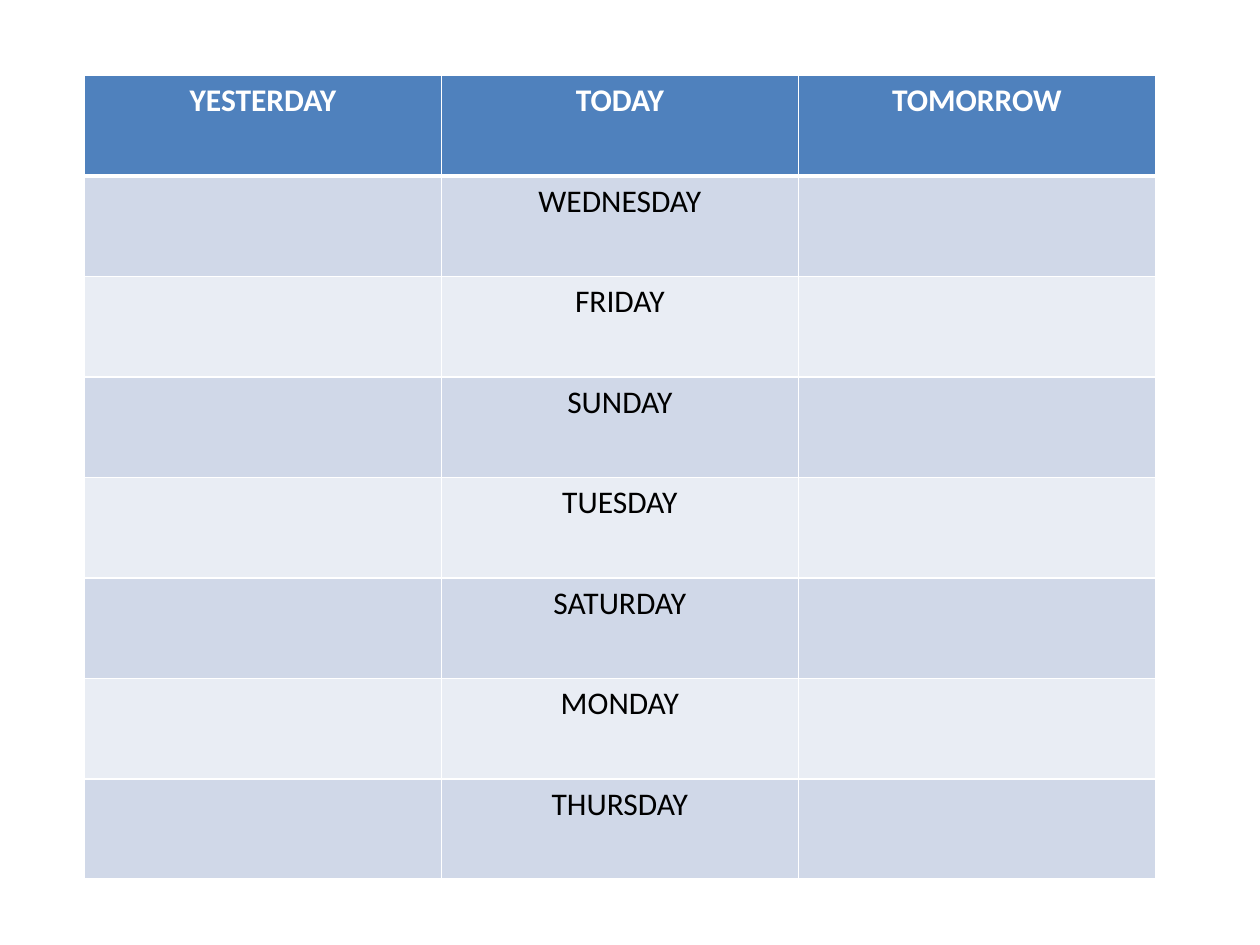
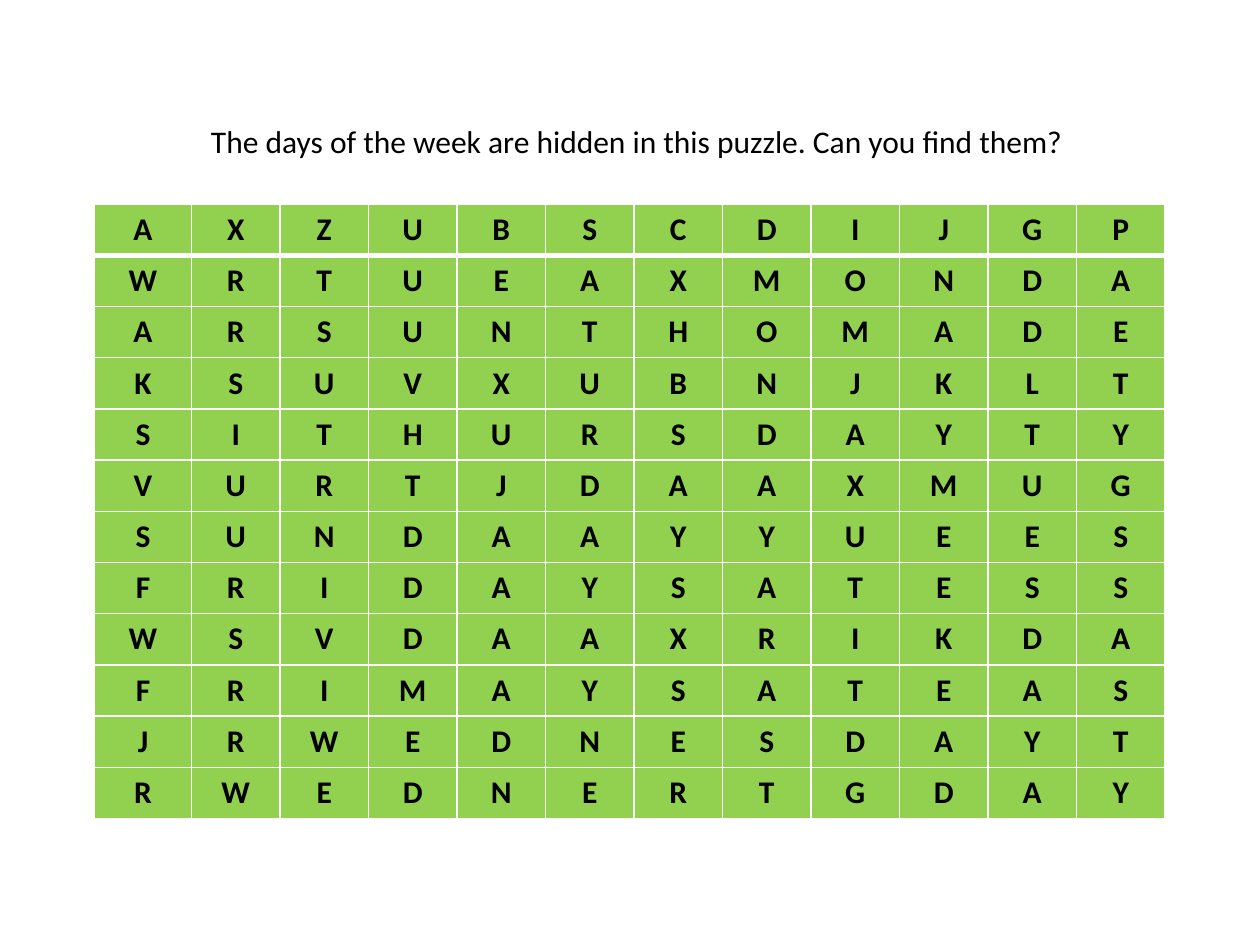
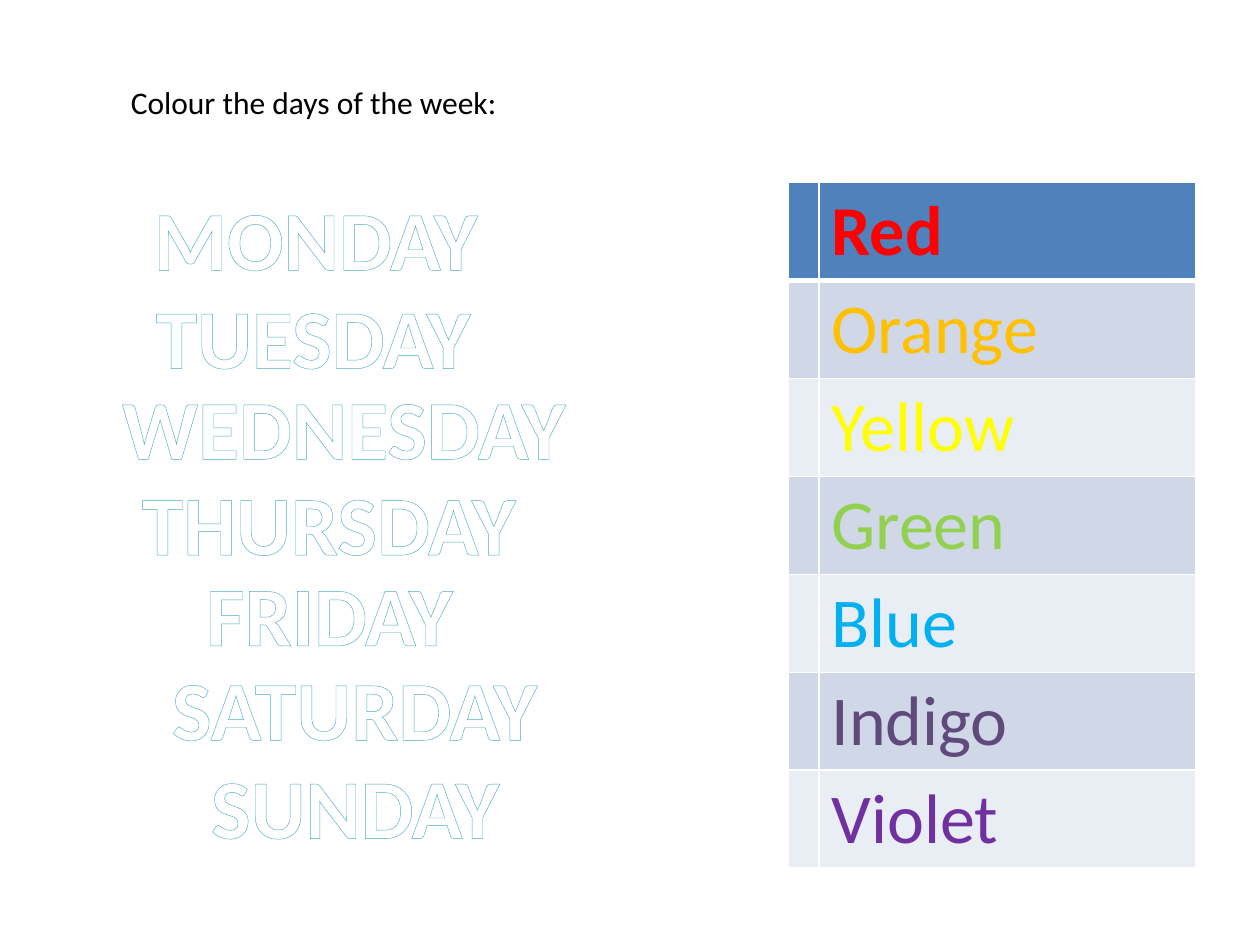
from lxml import etree
from pptx import Presentation
from pptx.dml import color
from pptx.enum import text
from pptx.oxml import ns
from pptx.util import Pt

SCALE = 9144
COLORS = {
    "white": "FFFFFF", "black": "000000", "header": "4F81BD",
    "band_dark": "D0D8E8", "band_light": "E9EDF4", "puzzle": "92D050",
    "outline": "4BACC6", "red": "FF0000", "orange": "FFC000",
    "yellow": "FFFF00", "green": "92D050", "blue": "00B0F0",
    "indigo": "604A7B", "violet": "7030A0",
}
BODY = {"size": Pt(18), "name": "Calibri", "bold": False}
STRONG = {**BODY, "bold": True}
SWATCH = {**BODY, "size": Pt(40)}
BIG = {**STRONG, "size": Pt(48)}
CENTER = text.PP_ALIGN.CENTER
LEFT = text.PP_ALIGN.LEFT

TODAYS = ["WEDNESDAY", "FRIDAY", "SUNDAY", "TUESDAY", "SATURDAY", "MONDAY", "THURSDAY"]
PUZZLE = """
AXZUBSCDIJGP
WRTUEAXMONDA
ARSUNTHOMADE
KSUVXUBNJKLT
SITHURSDAYTY
VURTJDAAXMUG
SUNDAAYYUEES
FRIDAYSATESS
WSVDAAXRIKDA
FRIMAYSATEAS
JRWEDNESDAYT
RWEDNERTGDAY
""".split()
RAINBOW = ["Red", "Orange", "Yellow", "Green", "Blue", "Indigo", "Violet"]
OUTLINED_DAYS = [
    ("MONDAY", 85, 143, 331, True),
    ("TUESDAY", 112, 221, 273, False),
    ("WEDNESDAY", 85, 293, 376, False),
    ("THURSDAY", 101, 369, 320, False),
    ("FRIDAY", 121, 441, 281, True),
    ("SATURDAY", 125, 516, 313, False),
    ("SUNDAY", 156, 594, 252, False),
]


def px(value):
    return round(value * SCALE)


def rgb(name):
    return color.RGBColor.from_string(COLORS[name])


def line(tag, name, points):
    element = etree.Element(ns.qn(tag), w=str(Pt(points)))
    fill = etree.SubElement(element, ns.qn("a:solidFill"))
    etree.SubElement(fill, ns.qn("a:srgbClr"), val=COLORS[name])
    return element


def banded(row):
    if row == 0:
        return "header"
    return "band_dark" if row % 2 else "band_light"


class Deck:
    def __init__(self, width, height):
        self.presentation = Presentation()
        self.presentation.slide_width = px(width)
        self.presentation.slide_height = px(height)
        self.slide = None

    def add_slide(self):
        self.slide = self.presentation.slides.add_slide(self.presentation.slide_layouts[6])

    def set_words(self, frame, words, style, ink, align):
        paragraph = frame.paragraphs[0]
        paragraph.alignment = align
        run = paragraph.add_run()
        run.text = words
        for attribute, value in style.items():
            setattr(run.font, attribute, value)
        run.font.color.rgb = rgb(ink)
        return run

    def add_text(self, words, box, style=BODY, ink="black", align=LEFT, wrap=True):
        frame = self.slide.shapes.add_textbox(*map(px, box)).text_frame
        frame.word_wrap = wrap
        frame.auto_size = text.MSO_AUTO_SIZE.NONE
        return self.set_words(frame, words, style, ink, align)

    def add_outlined_text(self, words, box, wrap):
        run = self.add_text(words, box, BIG, "white", CENTER, wrap)
        run._r.get_or_add_rPr().insert(0, line("a:ln", "outline", 0.8))

    def add_borders(self, cell, row):
        weights = {"L": 1, "R": 1, "T": 3 if row == 1 else 1, "B": 1 if row else 3}
        properties = cell._tc.get_or_add_tcPr()
        for index, (side, points) in enumerate(weights.items()):
            properties.insert(index, line(f"a:ln{side}", "white", points))

    def add_table(self, rows, box, fill_of, look_of, align=CENTER, first_width=None):
        count = len(rows[0])
        width, height = box[2:]
        table = self.slide.shapes.add_table(len(rows), count, *map(px, box)).table
        table.first_row = table.horz_banding = False
        widths = [width / count] * count
        if first_width:
            widths = [first_width] + [(width - first_width) / (count - 1)] * (count - 1)
        for column, column_width in zip(table.columns, widths):
            column.width = px(column_width)
        for row, words_in_row in enumerate(rows):
            table.rows[row].height = px(height / len(rows))
            for column, words in enumerate(words_in_row):
                cell = table.cell(row, column)
                cell.fill.solid()
                cell.fill.fore_color.rgb = rgb(fill_of(row))
                self.add_borders(cell, row)
                if words:
                    self.set_words(cell.text_frame, words, *look_of(row), align)


def main():
    deck = Deck(1000, 750)

    deck.add_slide()
    deck.add_table(
        [["YESTERDAY", "TODAY", "TOMORROW"]] + [["", day, ""] for day in TODAYS],
        (67, 60, 850, 638), banded,
        lambda row: (BODY, "black") if row else (STRONG, "white"))

    deck.add_slide()
    deck.add_text("The days of the week are hidden in this puzzle. Can you find them?",
                  (98, 92, 815, 101), align=CENTER)
    deck.add_table(PUZZLE, (75, 162, 850, 488), lambda row: "puzzle",
                   lambda row: (STRONG, "black"), first_width=77)

    deck.add_slide()
    deck.add_text("Colour the days of the week:", (94, 61, 314, 101), wrap=False)
    deck.add_table(
        [["", name] for name in RAINBOW], (626, 145, 323, 542), banded,
        lambda row: ({**SWATCH, "bold": row == 0}, RAINBOW[row].lower()),
        LEFT, first_width=24)
    for day, left, top, width, wrap in OUTLINED_DAYS:
        deck.add_outlined_text(day, (left, top, width, 91), wrap)

    deck.presentation.save("out.pptx")


if __name__ == "__main__":
    main()
